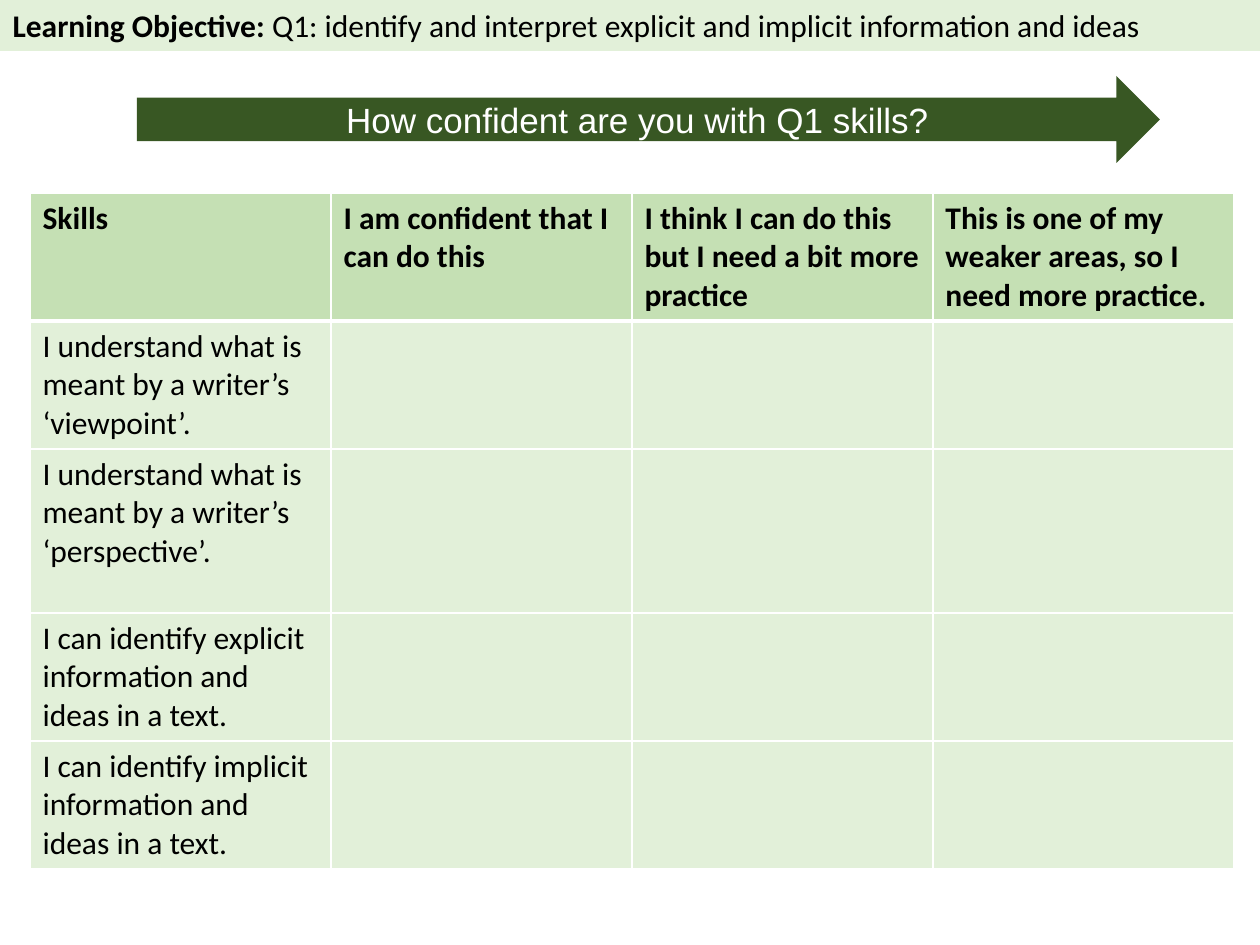
"""Build the Q1 skills confidence check slide."""
import dataclasses

import lxml.etree
import pptx
import pptx.dml.color
import pptx.enum.shapes
import pptx.enum.text
import pptx.oxml.ns
import pptx.util

PX_PER_INCH = 126
COLUMN_WIDTH = 301
ROW_HEIGHTS = (126, 126, 164, 126, 126)
HEADERS = (
    "Skills",
    "I am confident that I can do this",
    "I think I can do this but I need a bit more practice",
    "This is one of my weaker areas, so I need more practice.",
)
SKILLS = (
    "I understand what is meant by a writer’s ‘viewpoint’.",
    "I understand what is meant by a writer’s ‘perspective’.",
    "I can identify explicit information and ideas in a text.",
    "I can identify implicit information and ideas in a text.",
)


@dataclasses.dataclass(frozen=True)
class Theme:
    """Colours, fonts and type sizes of the slide."""

    pale: str = "E2F0D9"
    light: str = "C5E0B4"
    dark: str = "385723"
    white: str = "FFFFFF"
    black: str = "000000"
    body_font: str = "Calibri"
    arrow_font: str = "Arial"
    body_size: int = 18
    arrow_size: int = 20
    thin_line: int = 1
    thick_line: int = 3


THEME = Theme()


def px(length):
    """Turn px into EMU."""
    return pptx.util.Emu(round(length * pptx.util.Inches(1) / PX_PER_INCH))


def place(shape, left, top, width, height):
    """Set the position and size of a shape in px."""
    shape.left, shape.top = px(left), px(top)
    shape.width, shape.height = px(width), px(height)


def paint(target, colour):
    """Give a shape or a cell a solid fill."""
    target.fill.solid()
    target.fill.fore_color.rgb = pptx.dml.color.RGBColor.from_string(colour)


def set_font(font, name, size, colour, bold=None):
    """Set the typeface, size, colour and weight of a font."""
    font.name, font.size, font.bold = name, pptx.util.Pt(size), bold
    font.color.rgb = pptx.dml.color.RGBColor.from_string(colour)


def add_objective(slide, label, objective):
    """Format the title as a full-width bar with a bold label."""
    title = slide.shapes.title
    place(title, 0, 0, 1260, 51)
    paint(title, THEME.pale)
    frame = title.text_frame
    frame.auto_size = pptx.enum.text.MSO_AUTO_SIZE.NONE
    frame.vertical_anchor = pptx.enum.text.MSO_ANCHOR.TOP
    para = frame.paragraphs[0]
    para.alignment = pptx.enum.text.PP_ALIGN.LEFT
    set_font(para.font, THEME.body_font, THEME.body_size, THEME.black)
    for text, bold in ((label, True), (objective, False)):
        span = para.add_run()
        span.text = text
        span.font.bold = bold


def add_arrow(slide, text):
    """Add the confidence arrow with its question."""
    arrow = slide.shapes.add_shape(
        pptx.enum.shapes.MSO_SHAPE.RIGHT_ARROW, px(137), px(76), px(1023), px(87)
    )
    arrow.shadow.inherit = False
    paint(arrow, THEME.dark)
    arrow.line.fill.background()
    arrow.text_frame.vertical_anchor = pptx.enum.text.MSO_ANCHOR.MIDDLE
    para = arrow.text_frame.paragraphs[0]
    para.text = text
    para.alignment = pptx.enum.text.PP_ALIGN.CENTER
    set_font(para.font, THEME.arrow_font, THEME.arrow_size, THEME.white)


def set_borders(cell, widths):
    """Draw white left, right, top and bottom borders with widths in points."""
    qn = pptx.oxml.ns.qn
    properties = cell._tc.get_or_add_tcPr()
    for index, (side, width) in enumerate(zip("LRTB", widths)):
        line = lxml.etree.Element(qn(f"a:ln{side}"), w=str(pptx.util.Pt(width)))
        fill = lxml.etree.SubElement(line, qn("a:solidFill"))
        lxml.etree.SubElement(fill, qn("a:srgbClr"), val=THEME.white)
        properties.insert(index, line)


def fill_cell(cell, text, row):
    """Write and style one cell of the table."""
    header = row == 0
    thin, thick = THEME.thin_line, THEME.thick_line
    para = cell.text_frame.paragraphs[0]
    para.text = text
    set_font(para.font, THEME.body_font, THEME.body_size, THEME.black, header)
    paint(cell, THEME.light if header else THEME.pale)
    top = thick if row == 1 else thin
    bottom = thick if header else thin
    set_borders(cell, (thin, thin, top, bottom))


def add_skills_table(slide):
    """Add the self-assessment table with empty answer cells."""
    rows = [HEADERS] + [(skill, "", "", "") for skill in SKILLS]
    columns = len(HEADERS)
    table = slide.shapes.add_table(
        len(rows), columns, px(30), px(193),
        px(COLUMN_WIDTH * columns), px(sum(ROW_HEIGHTS)),
    ).table
    for column in table.columns:
        column.width = px(COLUMN_WIDTH)
    for row, (texts, height) in enumerate(zip(rows, ROW_HEIGHTS)):
        table.rows[row].height = px(height)
        for column, text in enumerate(texts):
            fill_cell(table.cell(row, column), text, row)


def main():
    """Build and save the deck."""
    deck = pptx.Presentation()
    deck.slide_width, deck.slide_height = px(1260), px(945)
    slide = deck.slides.add_slide(deck.slide_layouts.get_by_name("Title Only"))
    add_objective(
        slide,
        "Learning Objective: ",
        "Q1: identify and interpret explicit and implicit information and ideas",
    )
    add_arrow(slide, "How confident are you with Q1 skills?")
    add_skills_table(slide)
    deck.save("out.pptx")


if __name__ == "__main__":
    main()
